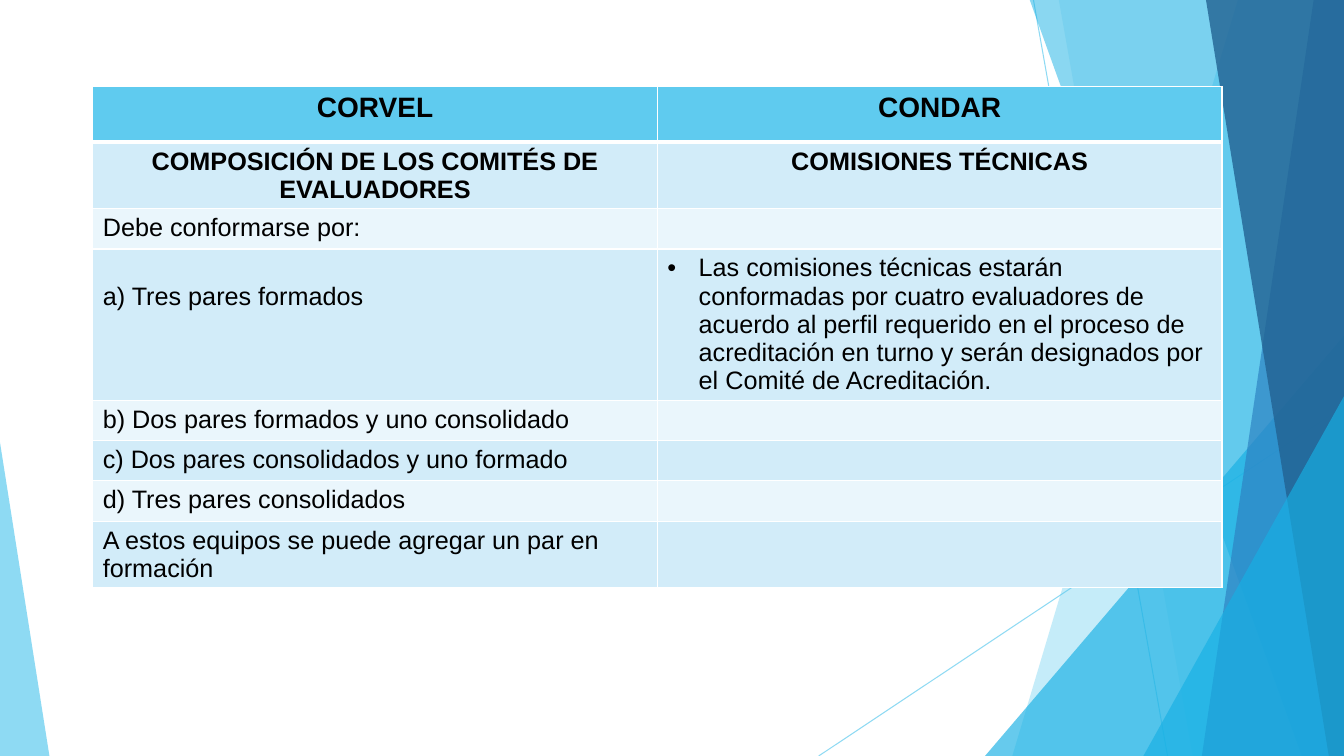
"""Build a slide comparing how two bodies form their evaluation committees."""
from lxml import etree
from pptx import Presentation
from pptx.dml.color import RGBColor
from pptx.enum.shapes import MSO_CONNECTOR as CONN, MSO_SHAPE as SHAPE
from pptx.enum.text import PP_ALIGN as ALIGN
from pptx.oxml import parse_xml
from pptx.oxml.ns import nsdecls, qn
from pptx.util import Inches, Pt

SKY, CYAN, BLUE, NAVY = "5FCBEF", "17B0E4", "2E83C3", "226292"
RIGHT, TOP, BOTTOM = 13.33, -0.01, 7.5


def paint(fill, color, element=None, alpha=100):
    fill.solid()
    fill.fore_color.rgb = RGBColor.from_string(color)
    if alpha < 100:
        clr = element.xpath(".//a:srgbClr")[0]
        etree.SubElement(clr, qn("a:alpha"), val=str(alpha * 1000))


prs = Presentation()
prs.slide_width, prs.slide_height = Inches(13.33), Inches(7.5)
s = prs.slides.add_slide(prs.slide_layouts[6])

for ends in [(10.25, 0, 11.58, BOTTOM), (RIGHT, 4.03, 8.12, BOTTOM)]:
    ln = s.shapes.add_connector(CONN.STRAIGHT, *map(Inches, ends))
    ln.line.width = Pt(0.75)
    paint(ln.line.fill, SKY, ln.element, 70)
    etree.SubElement(ln.element.spPr, qn("a:effectLst"))

facets = [
    ("band", (12.28, 10.04), SKY, 36),
    ("band", (10.5, 11.83), SKY, 20),
    ("triangle", (9.77, 3.33, 3.56, 4.17, 1), CYAN, 66),
    ("band", (10.21, 12.91), CYAN, 50),
    ("band", (13.03, 11.92), BLUE, 70),
    ("band", (11.96, 13.18), NAVY, 80),
    ("triangle", (11.34, 3.93, 1.99, 3.57, 1), CYAN, 66),
    ("triangle", (0, 4.39, 0.49, 3.11, 0), SKY, 70),
]
for kind, geometry, color, alpha in facets:
    if kind == "band":
        top_x, bottom_x = geometry
        fb = s.shapes.build_freeform(Inches(top_x), Inches(TOP))
        corners = [(RIGHT, TOP), (RIGHT, BOTTOM), (bottom_x, BOTTOM)]
        fb.add_line_segments([(Inches(x), Inches(y)) for x, y in corners], close=True)
        sp = fb.convert_to_shape()
    else:
        *box, apex = geometry
        sp = s.shapes.add_shape(SHAPE.ISOSCELES_TRIANGLE, *map(Inches, box))
        sp.adjustments[0] = apex
    sp.shadow.inherit = False
    sp.line.fill.background()
    paint(sp.fill, color, sp.element, alpha)

rows = [
    (0.55, "CORVEL", "CONDAR"),
    (0.65, "COMPOSICIÓN DE LOS COMITÉS DE EVALUADORES", "COMISIONES TÉCNICAS"),
    (0.4, "Debe conformarse por:", ""),
    (1.5, "a) Tres pares formados",
     "Las comisiones técnicas estarán conformadas por cuatro evaluadores de acuerdo al "
     "perfil requerido en el proceso de acreditación en turno y serán designados por el "
     "Comité de Acreditación."),
    (0.4, "b) Dos pares formados y uno consolidado", ""),
    (0.4, "c) Dos pares consolidados y uno formado", ""),
    (0.4, "d) Tres pares consolidados", ""),
    (0.65, "A estos equipos se puede agregar un par en formación", ""),
]
height = sum(row[0] for row in rows)
table = s.shapes.add_table(len(rows), 2, Inches(0.92), Inches(0.86),
                           Inches(11.2), Inches(height)).table
for col in table.columns:
    col.width = Inches(5.6)

for i, (row_height, *texts) in enumerate(rows):
    table.rows[i].height = Inches(row_height)
    for j, text in enumerate(texts):
        cell = table.cell(i, j)
        paint(cell.fill, SKY if i == 0 else "D2ECF9" if i % 2 else "EAF6FC")
        tcPr = cell._tc.get_or_add_tcPr()
        for k, side in enumerate("LRTB"):
            thick = (side, i) in [("B", 0), ("T", 1)]
            tcPr.insert(k, parse_xml(
                f'<a:ln{side} {nsdecls("a")} w="{Pt(3 if thick else 1)}"><a:solidFill>'
                f'<a:srgbClr val="FFFFFF"/></a:solidFill></a:ln{side}>'))
        p = cell.text_frame.paragraphs[0]
        p.text = text
        p.alignment = ALIGN.CENTER if i < 2 else ALIGN.LEFT
        p.font.name, p.font.size, p.font.bold = "Arial", Pt(18 if i else 20), i < 2
        paint(p.font.fill, "000000")

table.cell(3, 0).margin_top = Inches(0.33)
pPr = table.cell(3, 1).text_frame.paragraphs[0]._p.get_or_add_pPr()
pPr.set("marL", str(Inches(0.31)))
pPr.set("indent", str(Inches(-0.31)))
pPr.insert(0, parse_xml(f'<a:buFont {nsdecls("a")} typeface="Arial"/>'))
pPr.insert(1, parse_xml(f'<a:buChar {nsdecls("a")} char="•"/>'))

prs.save("out.pptx")
